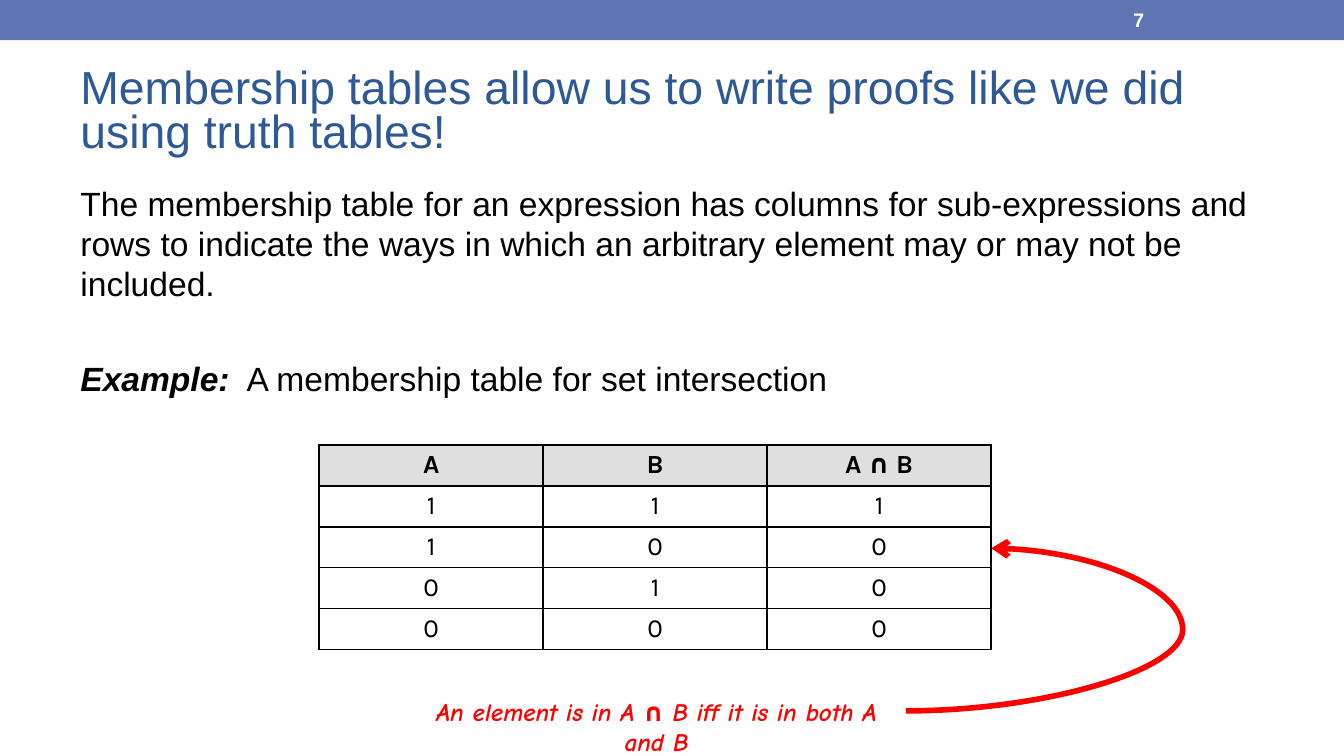
from dataclasses import dataclass

from lxml import etree
from pptx import Presentation
from pptx import util as u
from pptx.dml.color import RGBColor
from pptx.enum import shapes, text
from pptx.oxml import ns

PX = 4572  # 200 px to the inch

BAND_BLUE = RGBColor(0x60, 0x76, 0xB4)
TITLE_BLUE = RGBColor(0x2F, 0x58, 0x97)
HEADER_GREY = RGBColor(0xDF, 0xDF, 0xDF)
BLACK = RGBColor(0, 0, 0)
WHITE = RGBColor(255, 255, 255)
RED = RGBColor(255, 0, 0)


@dataclass(frozen=True)
class Area:
    left: int
    top: int
    width: int
    height: int

    def emu(self) -> tuple[int, ...]:
        return tuple(v * PX for v in (self.left, self.top, self.width, self.height))


@dataclass(frozen=True)
class Style:
    font: str
    size: float
    color: RGBColor
    bold: bool = False
    italic: bool = False


TITLE = Style("Arial", 24.8, TITLE_BLUE)
BODY = Style("Arial", 18, BLACK)
EXAMPLE = Style("Arial", 18, BLACK, bold=True, italic=True)
NUMBER = Style("Arial", 10.5, WHITE, bold=True)
HEADER = Style("Karla", 14, BLACK, bold=True)
ENTRY = Style("Karla", 14, BLACK)
CAPTION = Style("Comic Neue", 13.5, RED, bold=True, italic=True)

MEMBERSHIP = [
    ("A", "B", "A ∩ B"),
    ("1", "1", "1"),
    ("1", "0", "0"),
    ("0", "1", "0"),
    ("0", "0", "0"),
]


def write(para, words: str, style: Style, *, align=None, spacing=None, before=None) -> None:
    """Add a span of text to a paragraph and set its format."""
    span = para.add_run()
    span.text = words
    font = span.font
    font.name, font.size = style.font, u.Pt(style.size)
    font.bold, font.italic = style.bold, style.italic
    font.color.rgb = style.color
    if align is not None:
        para.alignment = align
    if spacing is not None:
        para.line_spacing = spacing
    if before is not None:
        para.space_before = u.Pt(before)


def add_box(page, area: Area, anchor=text.MSO_ANCHOR.TOP):
    frame = page.shapes.add_textbox(*area.emu()).text_frame
    frame.word_wrap = True
    frame.vertical_anchor = anchor
    return frame


def add_borders(cell) -> None:
    properties = cell._tc.get_or_add_tcPr()
    for side in ("lnL", "lnR", "lnT", "lnB"):
        line = etree.SubElement(properties, ns.qn(f"a:{side}"), w=str(u.Pt(1)))
        fill = etree.SubElement(line, ns.qn("a:solidFill"))
        etree.SubElement(fill, ns.qn("a:srgbClr"), val=str(BLACK))


def add_membership_table(page, area: Area) -> None:
    rows, columns = len(MEMBERSHIP), len(MEMBERSHIP[0])
    table = page.shapes.add_table(rows, columns, *area.emu()).table
    table.first_row = table.horz_banding = False
    for r, values in enumerate(MEMBERSHIP):
        for c, value in enumerate(values):
            cell = table.cell(r, c)
            cell.margin_left = cell.margin_right = 14 * PX
            cell.margin_top = cell.margin_bottom = 7 * PX
            write(cell.text_frame.paragraphs[0], value, ENTRY if r else HEADER,
                  align=text.PP_ALIGN.CENTER)
            add_borders(cell)
            if r:
                cell.fill.background()
            else:
                cell.fill.solid()
                cell.fill.fore_color.rgb = HEADER_GREY


def add_curved_arrow(page, start: tuple[int, int], end: tuple[int, int], bend: int) -> None:
    """Draw a curve that swings out to the x position given by bend."""
    arrow = page.shapes.add_connector(
        shapes.MSO_CONNECTOR.CURVE, *(v * PX for v in start + end))
    arrow.line.color.rgb = RED
    arrow.line.width = u.Pt(3)
    etree.SubElement(arrow.line._get_or_add_ln(), ns.qn("a:tailEnd"), type="arrow")
    properties = arrow._element.spPr
    etree.SubElement(properties, ns.qn("a:effectLst"))
    guides = properties.find(ns.qn("a:prstGeom")).get_or_add_avLst()
    ratio = round((bend - start[0]) / (end[0] - start[0]) * 100000)
    etree.SubElement(guides, ns.qn("a:gd"), name="adj1", fmla=f"val {ratio}")


def main() -> None:
    deck = Presentation()
    deck.slide_width, deck.slide_height = 2000 * PX, 1125 * PX
    page = deck.slides.add_slide(deck.slide_layouts[6])

    # Top band and page number
    band = page.shapes.add_shape(shapes.MSO_SHAPE.RECTANGLE, *Area(0, 0, 2000, 60).emu())
    band.shadow.inherit = False
    band.fill.solid()
    band.fill.fore_color.rgb = BAND_BLUE
    band.line.fill.background()
    number = add_box(page, Area(1667, 2, 233, 54), text.MSO_ANCHOR.MIDDLE)
    write(number.paragraphs[0], "7", NUMBER)

    # Title
    title = add_box(page, Area(100, 87, 1800, 162), text.MSO_ANCHOR.MIDDLE)
    write(title.paragraphs[0],
          "Membership tables allow us to write proofs like we did using truth tables!",
          TITLE, spacing=0.8)

    # Body text
    body = add_box(page, Area(100, 262, 1800, 800))
    write(body.paragraphs[0],
          "The membership table for an expression has columns for sub-expressions and rows "
          "to indicate the ways in which an arbitrary element may or may not be included.",
          BODY)
    example = body.add_paragraph()
    write(example, "Example:", EXAMPLE, before=29)
    write(example, "  A membership table for set intersection", BODY)

    # Membership table
    add_membership_table(page, Area(475, 662, 1000, 305))

    # Caption with its arrow to the table
    caption = add_box(page, Area(606, 1026, 742, 66))
    write(caption.paragraphs[0], "An element is in A ∩ B iff it is in both A and B",
          CAPTION, align=text.PP_ALIGN.CENTER)
    add_curved_arrow(page, (1348, 1058), (1475, 816), bend=1760)

    deck.save("out.pptx")


if __name__ == "__main__":
    main()
